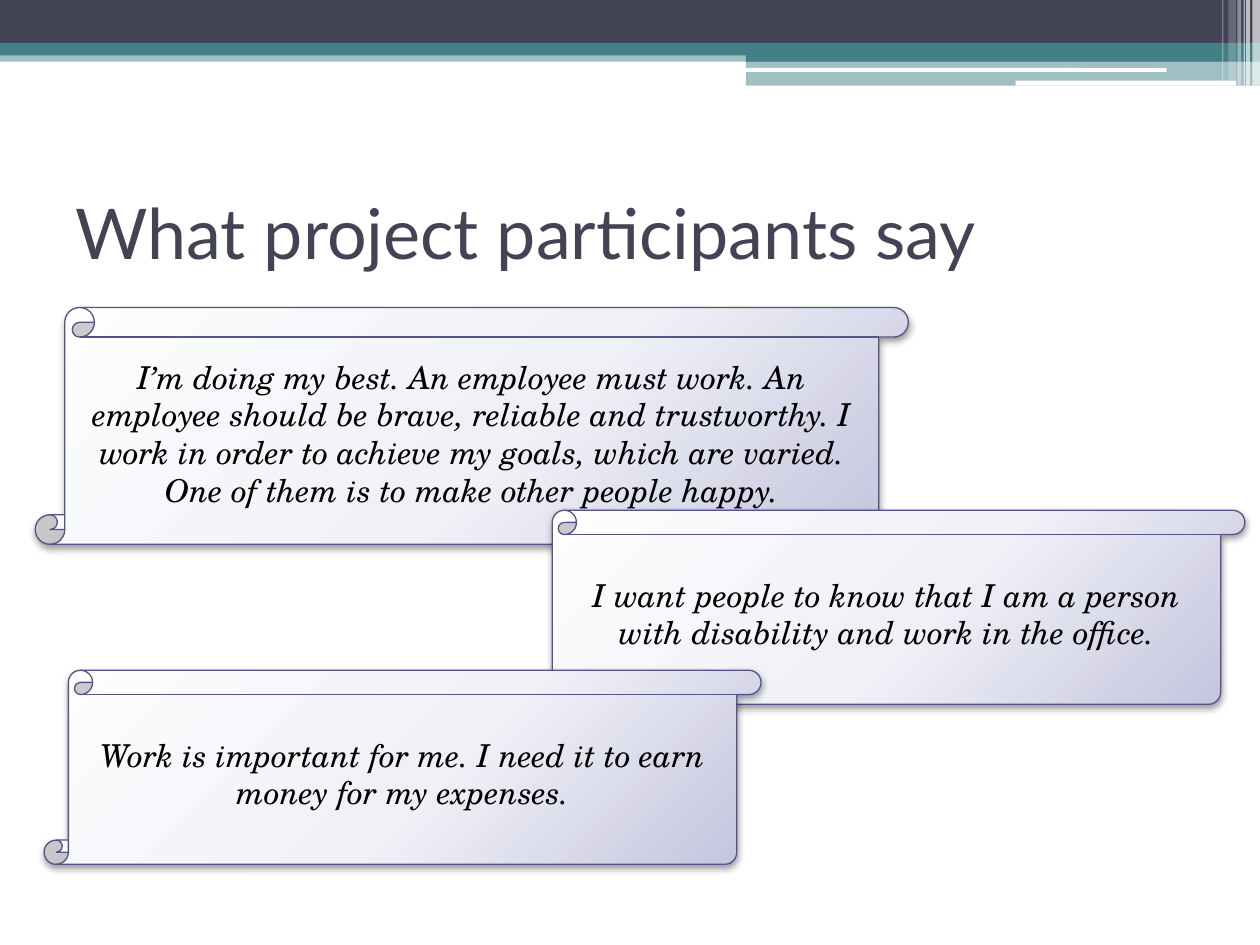
from pptx import Presentation
from pptx.dml.color import RGBColor
from pptx.enum.shapes import MSO_SHAPE as SHAPE
from pptx.enum.text import MSO_ANCHOR as ANCHOR, PP_ALIGN as ALIGN
from pptx.oxml import parse_xml
from pptx.oxml.ns import nsdecls, qn
from pptx.util import Inches, Pt

SLATE = RGBColor(0x42, 0x44, 0x56)
TEAL = RGBColor(0x43, 0x80, 0x86)
INDIGO = RGBColor(0x53, 0x54, 0x8A)
WHITE = RGBColor(0xFF, 0xFF, 0xFF)
BLACK = RGBColor(0, 0, 0)

TITLE = "What project participants say"
TITLE_FONT = {"name": "Lato", "size": Pt(40)}
QUOTE_FONT = {"name": "TeX Gyre Schola", "size": Pt(18), "italic": True}

# Quotes: left, top, width, height, text
QUOTES = [
    (0.28, 2.44, 6.93, 1.88,
     "I’m doing my best. An employee must work. An employee should be brave, "
     "reliable and trustworthy. I work in order to achieve my goals, which are "
     "varied. One of them is to make other people happy."),
    (4.19, 4.05, 5.69, 1.54,
     "I want people to know that I am a person with disability and work in the office."),
    (0.35, 5.32, 5.69, 1.54,
     "Work is important for me. I need it to earn money for my expenses."),
]

# Header bands: left, top, width, height, colour, opacity %
BANDS = [
    (0, 0.4, 10, 0.09, TEAL, 50),
    (0, 0, 10, 0.34, SLATE, 100),
    (0, 0.34, 10, 0.1, TEAL, 100),
    (5.92, 0.39, 4.08, 0.1, TEAL, 100),
    (5.92, 0.48, 4.08, 0.2, TEAL, 50),
]
# Rounded white bars: left, top, width, height
BARS = [(5.91, 0.54, 3.35, 0.03), (8.06, 0.64, 1.75, 0.04)]
# White stripes at the right edge: left, width, height, opacity %
STRIPES = [
    (9.94, 0.06, 0.68, 65), (9.89, 0.03, 0.68, 65), (9.87, 0.01, 0.68, 60),
    (9.82, 0.03, 0.68, 40), (9.75, 0.06, 0.64, 20), (9.7, 0.01, 0.64, 30),
]

# Scroll look: gradient stops (position %, colour)
STOPS = [(0, "FEFEFE"), (55, "F0F1F7"), (100, "C2C2DD")]
GRADIENT = (
    f'<a:gradFill {nsdecls("a")} rotWithShape="1"><a:gsLst>'
    + "".join(f'<a:gs pos="{pos * 1000}"><a:srgbClr val="{c}"/></a:gs>' for pos, c in STOPS)
    + '</a:gsLst><a:path path="circle">'
    '<a:fillToRect l="-40000" t="-90000" r="140000" b="190000"/></a:path></a:gradFill>'
)
SHADOW = (
    f'<a:outerShdw {nsdecls("a")} blurRad="{Pt(4.1)}" dist="{Pt(2)}" dir="5400000" '
    'rotWithShape="0"><a:srgbClr val="000000"><a:alpha val="40000"/></a:srgbClr></a:outerShdw>'
)


def add_shape(s, kind, *box):
    sp = s.shapes.add_shape(kind, *map(Inches, box))
    sp.shadow.inherit = False
    return sp


def add_band(s, kind, box, color, opacity=100):
    sp = add_shape(s, kind, *box)
    sp.fill.solid()
    sp.fill.fore_color.rgb = color
    sp.line.fill.background()
    if opacity < 100:
        clr = sp._element.spPr.find(qn("a:solidFill"))[0]
        clr.append(parse_xml(f'<a:alpha {nsdecls("a")} val="{opacity * 1000}"/>'))


def set_text(tf, text, font, color, align):
    tf.word_wrap = True
    tf.vertical_anchor = ANCHOR.MIDDLE
    p = tf.paragraphs[0]
    p.alignment = align
    r = p.add_run()
    r.text = text
    for key, value in font.items():
        setattr(r.font, key, value)
    r.font.color.rgb = color


def add_scroll(s, box, text):
    sp = add_shape(s, SHAPE.VERTICAL_SCROLL, *box)
    sp.line.color.rgb = INDIGO
    sp.line.width = Pt(0.75)
    spPr = sp._element.spPr
    spPr.find(qn("a:prstGeom")).addnext(parse_xml(GRADIENT))
    spPr.find(qn("a:effectLst")).append(parse_xml(SHADOW))
    set_text(sp.text_frame, text, QUOTE_FONT, BLACK, ALIGN.CENTER)


def main():
    prs = Presentation()
    prs.slide_width, prs.slide_height = Inches(10), Inches(7.5)
    s = prs.slides.add_slide(prs.slide_layouts[5])

    # Header decoration
    for *box, color, opacity in BANDS:
        add_band(s, SHAPE.RECTANGLE, box, color, opacity)
    for box in BARS:
        add_band(s, SHAPE.ROUNDED_RECTANGLE, box, WHITE)
    for left, width, height, opacity in STRIPES:
        add_band(s, SHAPE.RECTANGLE, (left, 0, width, height), WHITE, opacity)

    # Title
    title = s.shapes.title
    title.left, title.top, title.width, title.height = map(Inches, (0.5, 1.25, 9, 1.17))
    set_text(title.text_frame, TITLE, TITLE_FONT, SLATE, ALIGN.LEFT)

    # Quotes on scrolls
    for *box, text in QUOTES:
        add_scroll(s, box, text)

    prs.save("out.pptx")


if __name__ == "__main__":
    main()
